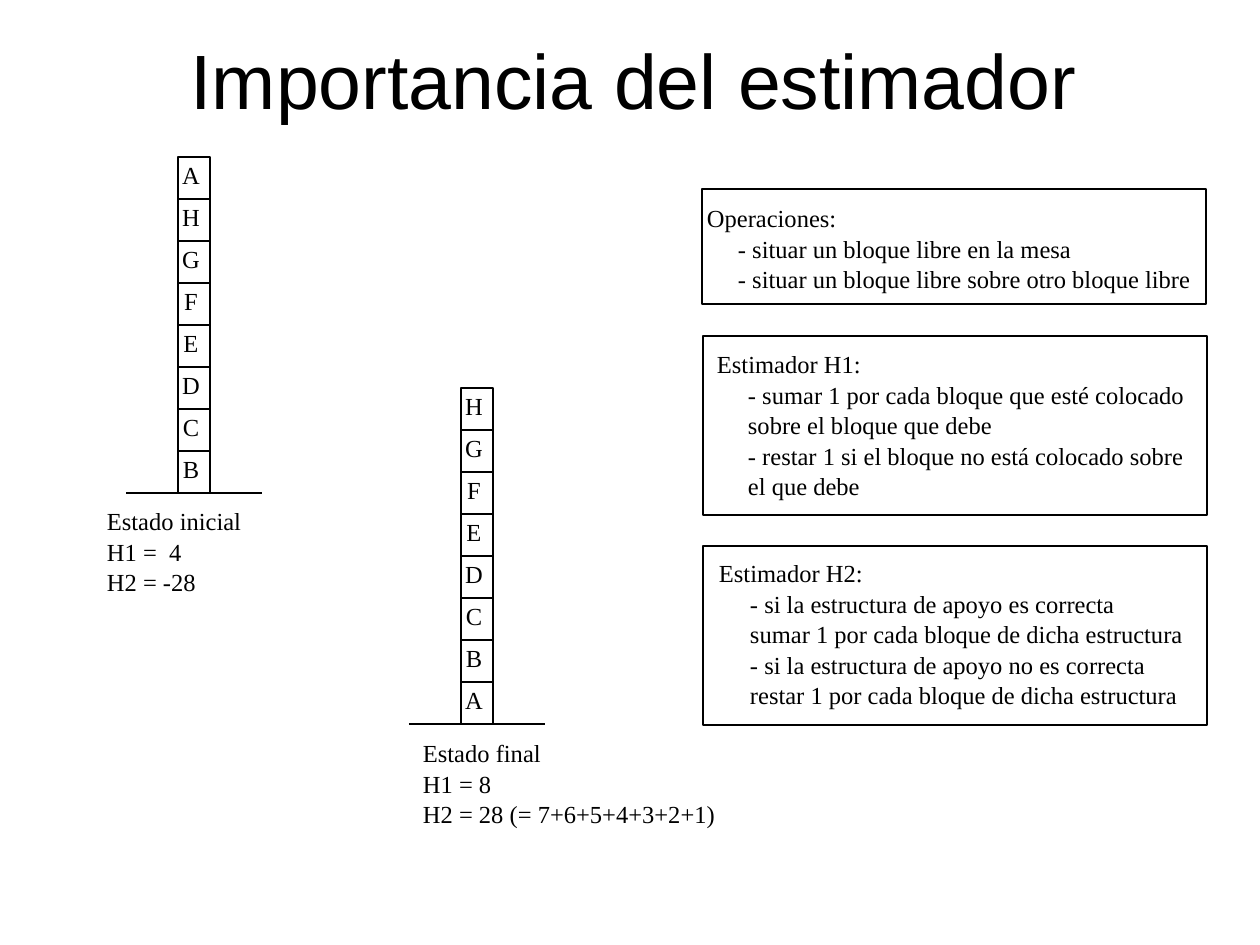
from lxml.etree import SubElement
from pptx import Presentation
from pptx.dml.color import RGBColor
from pptx.enum.shapes import MSO_CONNECTOR, MSO_SHAPE
from pptx.enum.text import MSO_ANCHOR, MSO_AUTO_SIZE, PP_ALIGN
from pptx.oxml.ns import qn
from pptx.util import Emu, Pt

BLACK = RGBColor(0, 0, 0)
PX_PER_INCH = 126
BLOCK_WIDTH, BLOCK_HEIGHT = 32, 42
GROUND_WIDTH, GROUND_OVERHANG = 136, 52
ITEM_INDENT = 31

TOWERS = [("AHGFEDCB", 126, 157), ("HGFEDCBA", 409, 388)]
CAPTIONS = [
    (102, 505, 151, ["Estado inicial", "H1 =  4", "H2 = -28"]),
    (418, 737, 305, ["Estado final", "H1 = 8", "H2 = 28 (= 7+6+5+4+3+2+1)"]),
]
PANELS = [
    ((702, 189, 504, 115), (5, 13), "Operaciones:", [
        "- situar un bloque libre en la mesa",
        "- situar un bloque libre sobre otro bloque libre",
    ]),
    ((703, 336, 504, 179), (14, 12), "Estimador H1:", [
        "- sumar 1 por cada bloque que esté colocado",
        "sobre el bloque que debe",
        "- restar 1 si el bloque no está colocado sobre",
        "el que debe",
    ]),
    ((703, 546, 504, 179), (16, 11), "Estimador H2:", [
        "- si la estructura de apoyo es correcta",
        "sumar 1 por cada bloque de dicha estructura",
        "- si la estructura de apoyo no es correcta",
        "restar 1 por cada bloque de dicha estructura",
    ]),
]


def px(length):
    """Turn px into EMU."""
    return Emu(round(length * 914400 / PX_PER_INCH))


class SlideBuilder:
    """Hold the style and the current slide, and draw its elements."""

    title_font, title_size = "Arial", Pt(44)
    body_font, body_size = "Times New Roman", Pt(14)
    line_width = Pt(0.75)
    line_spacing = 1.04

    def __init__(self, page):
        """Keep the slide to draw on."""
        self.page = page

    def set_frame(self, box, insets, anchor=MSO_ANCHOR.TOP, wrap=True):
        """Set the insets, anchor and wrapping of a box."""
        frame = box.text_frame
        frame.auto_size = MSO_AUTO_SIZE.NONE
        frame.word_wrap = wrap
        frame.vertical_anchor = anchor
        left, top, right, bottom = map(px, insets)
        frame.margin_left, frame.margin_top = left, top
        frame.margin_right, frame.margin_bottom = right, bottom
        return frame

    def add_span(self, para, text, font, size):
        """Add one black run to a paragraph."""
        span = para.add_run()
        span.text = text
        span.font.name, span.font.size = font, size
        span.font.color.rgb = BLACK

    def write_lines(self, frame, lines, align=PP_ALIGN.LEFT, item_indent=0):
        """Write body lines, indenting those after the first."""
        for index, line in enumerate(lines):
            para = frame.add_paragraph() if index else frame.paragraphs[0]
            para.alignment = align
            para.line_spacing = self.line_spacing
            if index and item_indent:
                para._p.get_or_add_pPr().set("marL", str(px(item_indent)))
            self.add_span(para, line, self.body_font, self.body_size)

    def title(self, text, left, top, width, height):
        """Place and fill the title placeholder."""
        box = self.page.shapes.title
        box.left, box.top = px(left), px(top)
        box.width, box.height = px(width), px(height)
        frame = self.set_frame(box, (13, 8, 5, 8), MSO_ANCHOR.MIDDLE)
        para = frame.paragraphs[0]
        para.alignment = PP_ALIGN.CENTER
        self.add_span(para, text, self.title_font, self.title_size)

    def rectangle(self, left, top, width, height):
        """Add an unfilled rectangle with a thin outline."""
        box = self.page.shapes.add_shape(
            MSO_SHAPE.RECTANGLE, px(left), px(top), px(width), px(height))
        box.shadow.inherit = False
        box.fill.background()
        box.line.color.rgb = BLACK
        box.line.width = self.line_width
        return box

    def ground(self, left, top, width):
        """Add the table line under a tower."""
        line = self.page.shapes.add_connector(
            MSO_CONNECTOR.STRAIGHT, px(left), px(top), px(left + width), px(top))
        line.line.color.rgb = BLACK
        line.line.width = self.line_width
        SubElement(line._element.spPr, qn("a:effectLst"))

    def tower(self, letters, left, top):
        """Stack lettered blocks on a table line."""
        self.ground(left, top + len(letters) * BLOCK_HEIGHT, GROUND_WIDTH)
        for index, letter in enumerate(letters):
            box = self.rectangle(left + GROUND_OVERHANG, top + index * BLOCK_HEIGHT,
                                 BLOCK_WIDTH, BLOCK_HEIGHT)
            frame = self.set_frame(box, (0, 2, 6, 0))
            self.write_lines(frame, [letter], PP_ALIGN.CENTER)

    def caption(self, left, top, width, lines):
        """Add the text under a tower."""
        box = self.page.shapes.add_textbox(px(left), px(top), px(width), px(90))
        self.write_lines(self.set_frame(box, (5, 0, 5, 0), wrap=False), lines)

    def panel(self, bounds, inset, heading, items):
        """Add a framed heading with indented lines."""
        frame = self.set_frame(self.rectangle(*bounds), (*inset, 0, 0))
        self.write_lines(frame, [heading, *items], item_indent=ITEM_INDENT)


def main():
    """Build and save the slide."""
    deck = Presentation()
    deck.slide_width, deck.slide_height = px(1260), px(945)
    builder = SlideBuilder(deck.slides.add_slide(deck.slide_layouts[5]))
    builder.title("Importancia del estimador", 94, 0, 1072, 158)
    for tower in TOWERS:
        builder.tower(*tower)
    for caption in CAPTIONS:
        builder.caption(*caption)
    for panel in PANELS:
        builder.panel(*panel)
    deck.save("out.pptx")


if __name__ == "__main__":
    main()
